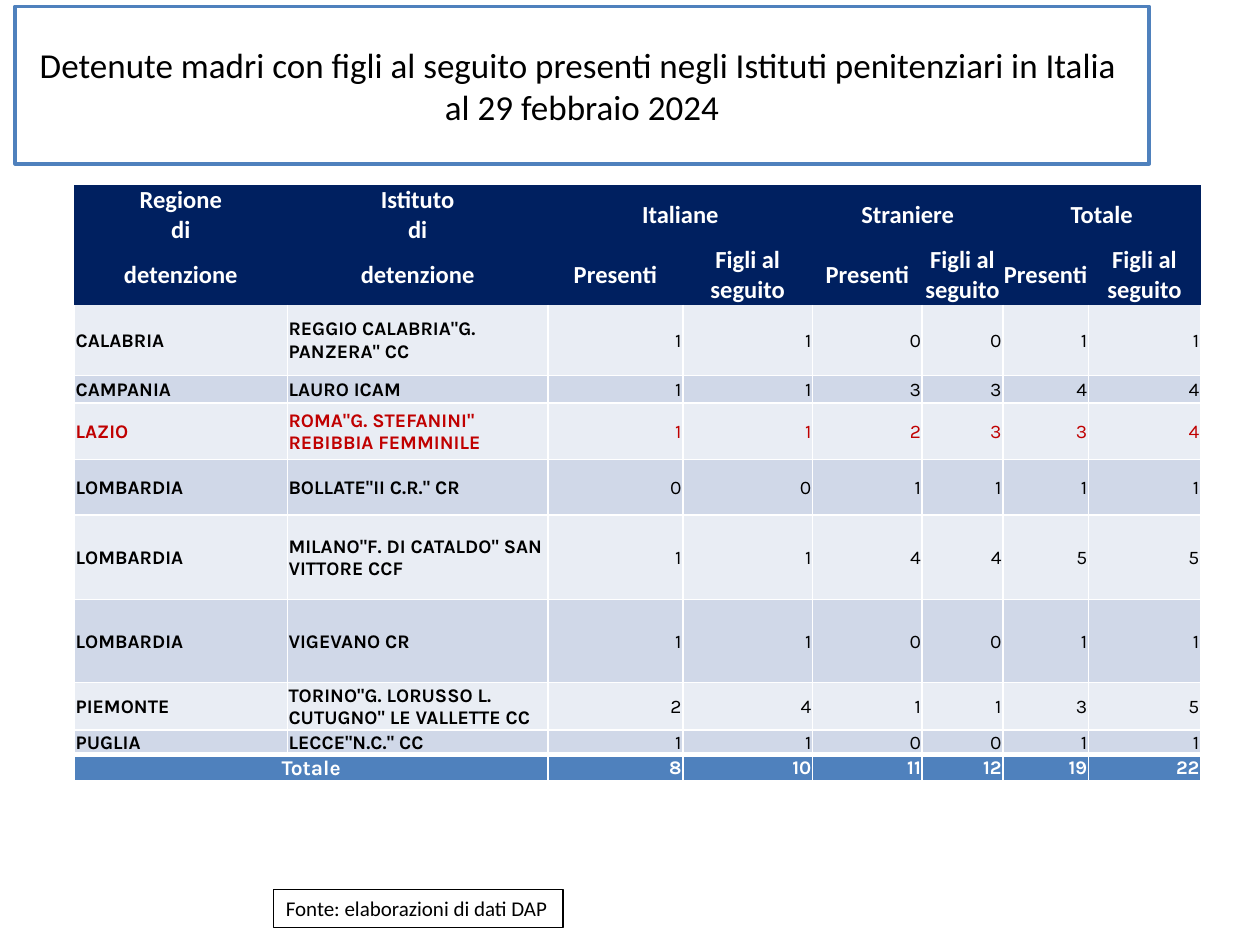
from pptx import Presentation, util as u
from pptx.dml.color import RGBColor
from pptx.enum import shapes, text
from pptx.oxml import parse_xml
from pptx.oxml.ns import nsdecls

HUES = {"navy": "002060", "blue": "4F81BD", "pale": "E9EDF4", "mid": "D0D8E8",
        "red": "C00000", "black": "000000", "white": "FFFFFF"}
COLS = [1.69, 2.07, 1.07, 1.03, 0.87, 0.64, 0.68, 0.89]
ROWS = [0.24, 0.24, 0.47, 0.56, 0.22, 0.45, 0.44, 0.67, 0.66, 0.37, 0.19, 0.2]
PAIR = ["Presenti", "Figli al seguito"]
HEAD = [["Regione", "Istituto", "Italiane", None, "Straniere", None, "Totale", None],
        ["di", "di"] + [None] * 6,
        ["detenzione", "detenzione"] + PAIR * 3]
BODY = [["CALABRIA", 'REGGIO CALABRIA"G. PANZERA" CC', 1, 1, 0, 0, 1, 1],
        ["CAMPANIA", "LAURO ICAM", 1, 1, 3, 3, 4, 4],
        ["LAZIO", 'ROMA"G. STEFANINI" REBIBBIA FEMMINILE', 1, 1, 2, 3, 3, 4],
        ["LOMBARDIA", 'BOLLATE"II C.R." CR', 0, 0, 1, 1, 1, 1],
        ["LOMBARDIA", 'MILANO"F. DI CATALDO" SAN VITTORE CCF', 1, 1, 4, 4, 5, 5],
        ["LOMBARDIA", "VIGEVANO CR", 1, 1, 0, 0, 1, 1],
        ["PIEMONTE", 'TORINO"G. LORUSSO L. CUTUGNO" LE VALLETTE CC', 2, 4, 1, 1, 3, 5],
        ["PUGLIA", 'LECCE"N.C." CC', 1, 1, 0, 0, 1, 1]]
TOTAL = ["Totale", None, 8, 10, 11, 12, 19, 22]
LEFT, MID, RIGHT = text.PP_ALIGN.LEFT, text.PP_ALIGN.CENTER, text.PP_ALIGN.RIGHT


def hue(name):
    return RGBColor.from_string(HUES[name])


def write(frame, words, size, face="Calibri", ink="black", bold=False, align=LEFT):
    frame.text = words
    para = frame.paragraphs[0]
    para.alignment = align
    for run in para.runs:
        run.font.size, run.font.name, run.font.bold = u.Pt(size), face, bold
        run.font.color.rgb = hue(ink)


def frame_box(box, line, width):
    box.fill.solid()
    box.fill.fore_color.rgb = hue("white")
    box.line.color.rgb = hue(line)
    box.line.width = u.Pt(width)


def edge(cell, sides):
    props = cell._tc.get_or_add_tcPr()
    for side in "LRTB":
        width = sides.get(side)
        fill = (f'<a:solidFill><a:srgbClr val="{HUES["white"]}"/></a:solidFill>'
                if width else "<a:noFill/>")
        props.append(parse_xml(
            f'<a:ln{side} {nsdecls("a")} w="{u.Pt(width or 0)}">{fill}</a:ln{side}>'))


def paint(cell, fill, sides, inset):
    edge(cell, sides)
    cell.fill.solid()
    cell.fill.fore_color.rgb = hue(fill)
    cell.vertical_anchor = text.MSO_ANCHOR.MIDDLE
    cell.margin_left = cell.margin_right = cell.margin_top = u.Inches(inset)
    cell.margin_bottom = 0


def add_title(slide):
    box = slide.shapes.title
    box.left, box.top = u.Inches(0.12), u.Inches(0.05)
    box.width, box.height = u.Inches(9), u.Inches(1.25)
    frame_box(box, "blue", 2)
    box.text_frame.vertical_anchor = text.MSO_ANCHOR.MIDDLE
    write(box.text_frame, "Detenute madri con figli al seguito presenti negli Istituti "
          "penitenziari in Italia \val 29 febbraio 2024", 20, align=MID)


def add_head(grid):
    for col in (2, 4, 6):
        grid.cell(0, col).merge(grid.cell(1, col + 1))
    for row, line in enumerate(HEAD):
        for col, words in enumerate(line):
            cell = grid.cell(row, col)
            paint(cell, "navy", {}, 0)
            if words:
                write(cell.text_frame, words, 14, ink="white", bold=True, align=MID)


def add_body(grid):
    for row, line in enumerate(BODY):
        ink = "red" if line[0] == "LAZIO" else "black"
        sides = dict(L=1, R=1, B=1) if row == 0 else dict(L=1, R=1, T=1, B=1)
        if row == len(BODY) - 1:
            sides["B"] = 3
        for col, value in enumerate(line):
            cell = grid.cell(row + len(HEAD), col)
            paint(cell, ("pale", "mid")[row % 2], sides, 0.01)
            write(cell.text_frame, str(value), 11, "Karla", ink, col < 2,
                  LEFT if col < 2 else RIGHT)


def add_total(grid):
    last = len(ROWS) - 1
    grid.cell(last, 0).merge(grid.cell(last, 1))
    for col, value in enumerate(TOTAL):
        cell = grid.cell(last, col)
        paint(cell, "blue", dict(L=1, R=1, T=3, B=1), 0.01)
        if value is not None:
            write(cell.text_frame, str(value), 11 if col else 12, "Karla", "white",
                  True, RIGHT if col else MID)


def add_grid(slide):
    grid = slide.shapes.add_table(
        len(ROWS), len(COLS), u.Inches(0.59), u.Inches(1.47),
        u.Inches(sum(COLS)), u.Inches(sum(ROWS))).table
    grid.first_row = grid.horz_banding = False
    for col, width in zip(grid.columns, COLS):
        col.width = u.Inches(width)
    for row, height in zip(grid.rows, ROWS):
        row.height = u.Inches(height)
    add_head(grid)
    add_body(grid)
    add_total(grid)


def add_source(slide):
    box = slide.shapes.add_shape(
        shapes.MSO_SHAPE.RECTANGLE, u.Inches(2.17), u.Inches(7.06),
        u.Inches(2.3), u.Inches(0.3))
    box.shadow.inherit = False
    frame_box(box, "black", 0.75)
    frame = box.text_frame
    frame.word_wrap = False
    frame.auto_size = text.MSO_AUTO_SIZE.SHAPE_TO_FIT_TEXT
    frame.vertical_anchor = text.MSO_ANCHOR.TOP
    write(frame, "Fonte: elaborazioni di dati DAP", 12)


def main():
    deck = Presentation()
    deck.slide_width, deck.slide_height = u.Inches(10), u.Inches(7.5)
    slide = deck.slides.add_slide(deck.slide_layouts[5])
    add_title(slide)
    add_source(slide)
    add_grid(slide)
    deck.save("out.pptx")


if __name__ == "__main__":
    main()
